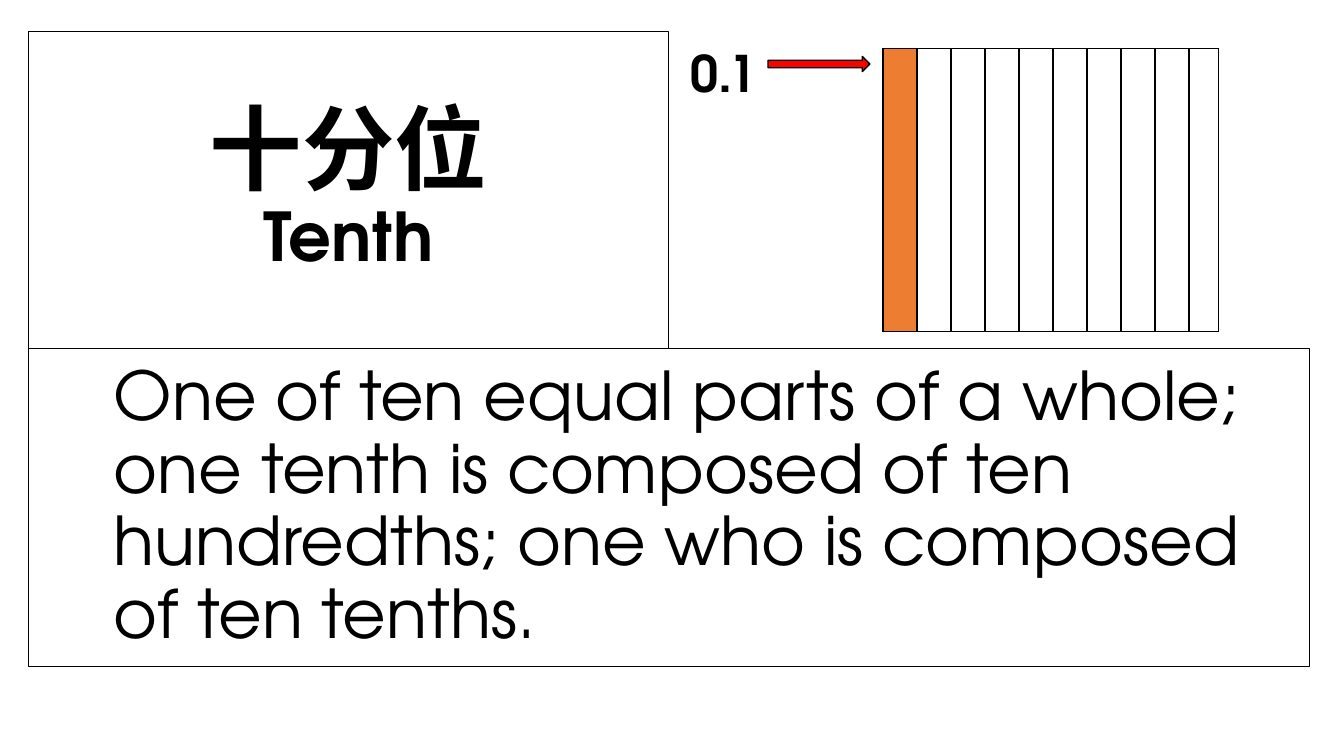
from lxml import etree
from pptx import Presentation
from pptx.dml.color import RGBColor
from pptx.enum import shapes, text
from pptx.oxml import ns
from pptx.util import Pt

BLACK = RGBColor(0x00, 0x00, 0x00)
RED = RGBColor(0xFF, 0x00, 0x00)
ORANGE = RGBColor(0xED, 0x7D, 0x31)
LATIN_FONT = "TeX Gyre Adventor"
CHINESE_FONT = "Calibri"


def add_run(paragraph, words, size, font=LATIN_FONT, bold=False):
    run = paragraph.add_run()
    run.text = words
    run.font.name = font
    run.font.size = Pt(size)
    run.font.bold = bold
    run.font.color.rgb = BLACK


def outline(shape, width):
    shape.line.color.rgb = BLACK
    shape.line.width = Pt(width)


def place(shape, left, top, width, height):
    shape.left, shape.top = Pt(left), Pt(top)
    shape.width, shape.height = Pt(width), Pt(height)


def centre_vertically(frame):
    frame.word_wrap = True
    frame.auto_size = text.MSO_AUTO_SIZE.NONE
    frame.vertical_anchor = text.MSO_ANCHOR.MIDDLE


def build_term(slide, left, top, width, height):
    term = slide.shapes.title
    place(term, left, top, width, height)
    outline(term, 0.75)
    centre_vertically(term.text_frame)
    paragraph = term.text_frame.paragraphs[0]
    paragraph.alignment = text.PP_ALIGN.CENTER
    paragraph.line_spacing = 0.9
    add_run(paragraph, "十分位", 66, CHINESE_FONT, True)
    paragraph.add_line_break()
    add_run(paragraph, "Tenth", 48, bold=True)


def build_definition(slide, left, top, width, height):
    definition = slide.shapes.add_textbox(Pt(left), Pt(top), Pt(width), Pt(height))
    outline(definition, 0.75)
    centre_vertically(definition.text_frame)
    paragraph = definition.text_frame.paragraphs[0]
    paragraph.line_spacing = 0.9
    properties = paragraph._p.get_or_add_pPr()
    properties.set("marL", str(Pt(54)))
    properties.set("indent", "0")
    add_run(
        paragraph,
        "One of ten equal parts of a whole; one tenth is composed of ten "
        "hundredths; one who is composed of ten tenths.",
        48,
    )


def border_cell(cell):
    properties = cell._tc.get_or_add_tcPr()
    for side in ("a:lnL", "a:lnR", "a:lnT", "a:lnB"):
        edge = etree.SubElement(properties, ns.qn(side), w=str(Pt(1)))
        fill = etree.SubElement(edge, ns.qn("a:solidFill"))
        etree.SubElement(fill, ns.qn("a:srgbClr"), val=str(BLACK))


def build_tenths(slide, left, top, width, height, parts=10):
    strip_width = 24.3
    tenths = slide.shapes.add_table(
        1, parts, Pt(left), Pt(top), Pt(width), Pt(height)
    ).table
    tenths.first_row = False
    tenths.horz_banding = False
    for index in range(parts):
        last = index == parts - 1
        tenths.columns[index].width = Pt(width - strip_width * index if last else strip_width)
        strip = tenths.cell(0, index)
        border_cell(strip)
        if index == 0:
            strip.fill.solid()
            strip.fill.fore_color.rgb = ORANGE
        else:
            strip.fill.background()


def build_pointer(slide, left, top, width, height):
    arrow = slide.shapes.add_shape(
        shapes.MSO_SHAPE.RIGHT_ARROW, Pt(left + 62.6), Pt(top + 13.7), Pt(72.7), Pt(10.8)
    )
    arrow.shadow.inherit = False
    arrow.fill.solid()
    arrow.fill.fore_color.rgb = RED
    outline(arrow, 1)
    decimal = slide.shapes.add_textbox(Pt(left), Pt(top), Pt(width), Pt(height))
    decimal.text_frame.word_wrap = True
    decimal.text_frame.auto_size = text.MSO_AUTO_SIZE.SHAPE_TO_FIT_TEXT
    add_run(decimal.text_frame.paragraphs[0], "0.1", 36, bold=True)


def main():
    deck = Presentation()
    deck.slide_width, deck.slide_height = Pt(960), Pt(540)
    slide = deck.slides.add_slide(deck.slide_layouts[5])
    left, top, panel_height = 20.2, 22.3, 226.8
    build_term(slide, left, top, 457.2, panel_height)
    build_definition(slide, left, top + panel_height, 915.1, panel_height)
    build_tenths(slide, 630.7, 34.6, 239.8, 202.3)
    build_pointer(slide, 486, 26.6, 87.1, 51.1)
    deck.save("out.pptx")


if __name__ == "__main__":
    main()
